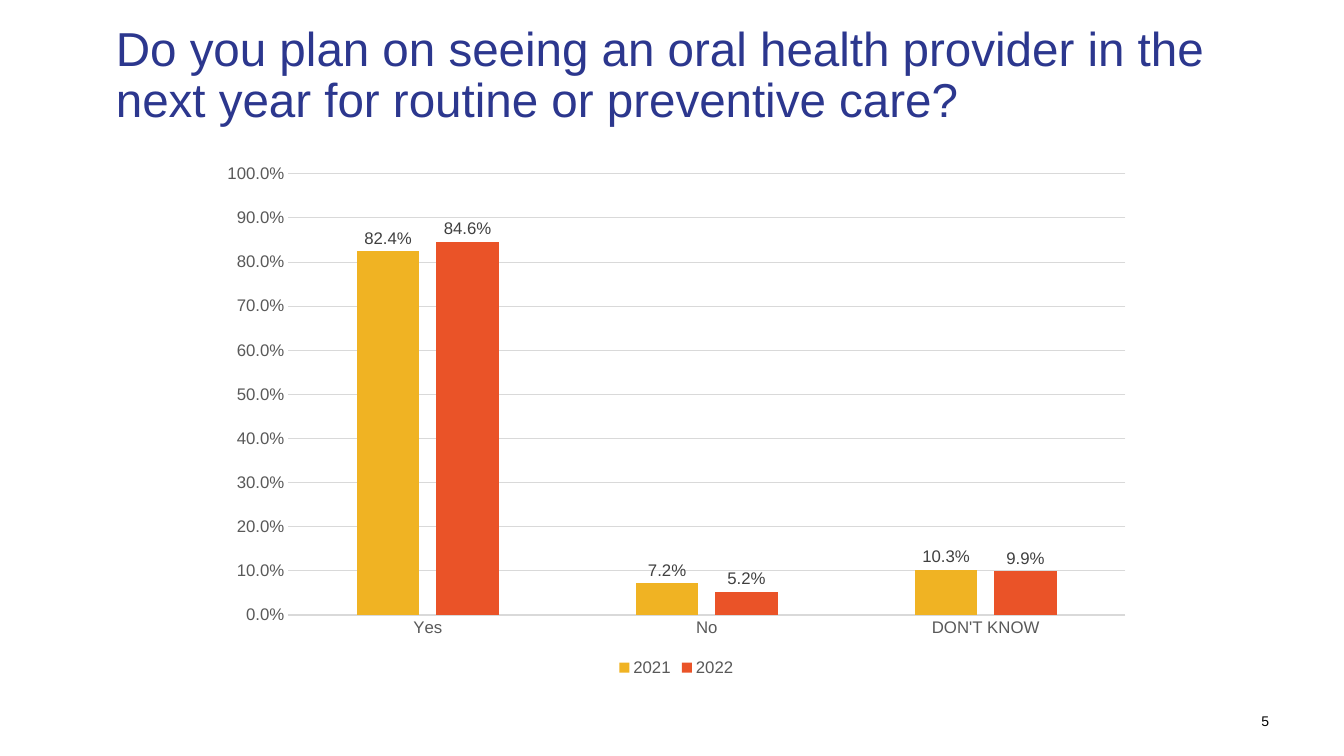
from pptx import Presentation
from pptx.chart.data import CategoryChartData as ChartData
from pptx.dml.color import RGBColor
from pptx.enum.chart import XL_CHART_TYPE as Kind
from pptx.enum.chart import XL_LABEL_POSITION as LabelPos
from pptx.enum.chart import XL_LEGEND_POSITION as LegendPos
from pptx.enum.chart import XL_TICK_MARK as Tick
from pptx.enum.text import MSO_ANCHOR as Anchor
from pptx.enum.text import PP_ALIGN as Align
from pptx.util import Cm, Pt

FACE = "Arial"
NAVY, BLACK = "2C378E", "000000"
GREY, DARK, RULE = "595959", "404040", "D9D9D9"
PERCENT = "0.0%"
ANSWERS = ["Yes", "No", "DON'T KNOW"]
YEARS = [
    ("2021", [0.824, 0.072, 0.103], "F0B323"),
    ("2022", [0.846, 0.052, 0.099], "EA5328"),
]


def color(code):
    return RGBColor.from_string(code)


def style(font, size, code):
    font.name = FACE
    font.size = Pt(size)
    font.color.rgb = color(code)


def rule(line):
    line.color.rgb = color(RULE)
    line.width = Pt(0.75)


def write(frame, text, size, code, align):
    frame.word_wrap = True
    frame.margin_left = frame.margin_right = 0
    frame.margin_top = frame.margin_bottom = 0
    para = frame.paragraphs[0]
    para.alignment = align
    run = para.add_run()
    run.text = text
    style(run.font, size, code)
    return para


def add_title(slide, text):
    title = slide.shapes.title
    title.left, title.top = Cm(2.92), Cm(0.58)
    title.width, title.height = Cm(27.74), Cm(2.69)
    title.text_frame.vertical_anchor = Anchor.MIDDLE
    para = write(title.text_frame, text, 34, NAVY, Align.LEFT)
    para.line_spacing = 0.9


def add_number(slide, text):
    box = slide.shapes.add_textbox(Cm(30.5), Cm(17.96), Cm(1.48), Cm(0.43))
    write(box.text_frame, text, 10, BLACK, Align.RIGHT)


def style_axis(axis):
    axis.major_tick_mark = axis.minor_tick_mark = Tick.NONE
    style(axis.tick_labels.font, 12, GREY)


def style_bars(bars, code):
    bars.format.fill.solid()
    bars.format.fill.fore_color.rgb = color(code)
    bars.invert_if_negative = False
    labels = bars.data_labels
    labels.show_value = True
    labels.position = LabelPos.OUTSIDE_END
    labels.number_format = PERCENT
    labels.number_format_is_linked = False
    style(labels.font, 12, DARK)


def add_columns(slide):
    data = ChartData(number_format=PERCENT)
    data.categories = ANSWERS
    for year, shares, _ in YEARS:
        data.add_series(year, shares)
    chart = slide.shapes.add_chart(
        Kind.COLUMN_CLUSTERED, Cm(5.26), Cm(3.89), Cm(23.57), Cm(13.26), data
    ).chart
    style(chart.font, 10, BLACK)
    chart.has_title = False

    # Axes
    style_axis(chart.category_axis)
    rule(chart.category_axis.format.line)
    scale = chart.value_axis
    style_axis(scale)
    scale.minimum_scale, scale.maximum_scale = 0, 1
    scale.major_unit = 0.1
    scale.format.line.fill.background()
    rule(scale.major_gridlines.format.line)
    scale.tick_labels.number_format = PERCENT
    scale.tick_labels.number_format_is_linked = False

    # Columns
    plot = chart.plots[0]
    plot.vary_by_categories = False
    plot.gap_width, plot.overlap = 219, -27
    for bars, (_, _, code) in zip(plot.series, YEARS):
        style_bars(bars, code)

    # Legend
    chart.has_legend = True
    chart.legend.position = LegendPos.BOTTOM
    chart.legend.include_in_layout = False
    style(chart.legend.font, 12, GREY)


def main():
    deck = Presentation()
    deck.slide_width, deck.slide_height = Cm(33.87), Cm(19.05)
    slide = deck.slides.add_slide(deck.slide_layouts[5])
    add_title(
        slide,
        "Do you plan on seeing an oral health provider in the "
        "next year for routine or preventive care?",
    )
    add_columns(slide)
    add_number(slide, "5")
    deck.save("out.pptx")


if __name__ == "__main__":
    main()
